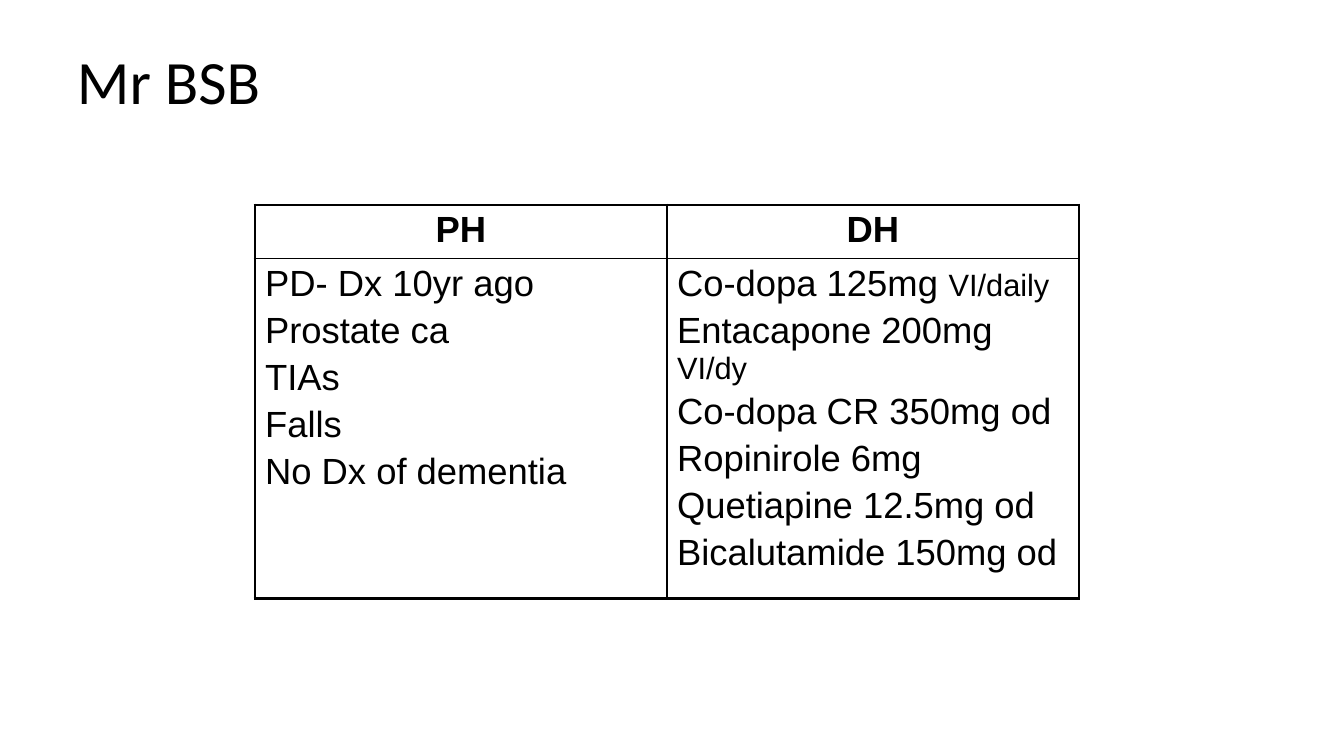
from lxml.etree import SubElement
from pptx import Presentation
from pptx.dml.color import RGBColor
from pptx.enum.text import MSO_ANCHOR, PP_ALIGN
from pptx.oxml.ns import qn
from pptx.util import Pt

COLORS = {"ink": "000000"}
TITLE = "Mr BSB"
HEADERS = ["PH", "DH"]
HISTORY = ["PD- Dx 10yr ago", "Prostate ca", "TIAs", "Falls", "No Dx of dementia"]
DRUGS = [
    ("Co-dopa 125mg ", "VI/daily"),
    ("Entacapone 200mg ", "VI/dy"),
    "Co-dopa CR 350mg od",
    "Ropinirole 6mg",
    "Quetiapine 12.5mg od",
    "Bicalutamide 150mg od",
]
ROWS = [[[header] for header in HEADERS], [HISTORY, DRUGS]]

SCALE = 914400 / 100.8
TITLE_AREA = (67, 13, 1109, 143)
TABLE_LEFT, TABLE_TOP = 255, 205
COLUMN_WIDTHS = [412, 412]
ROW_HEIGHTS = [51, 325]
INNER_LINE, OUTER_LINE = 1, 2.25
PARAGRAPH_GAP = 4.4

TITLE_FONT = {"name": "Calibri", "size": Pt(44)}
HEADER_FONT = {"name": "Arial", "size": Pt(26), "bold": True}
BODY_FONT = {"name": "Arial", "size": Pt(26), "bold": False}
DOSE_FONT = {"name": "Arial", "size": Pt(22), "bold": False}


def px(length):
    return round(length * SCALE)


def add_span(para, text, font_format):
    span = para.add_run()
    span.text = text
    for name, value in font_format.items():
        setattr(span.font, name, value)
    span.font.color.rgb = RGBColor.from_string(COLORS["ink"])


def set_borders(cell, widths):
    properties = cell._tc.get_or_add_tcPr()
    for side, width in widths.items():
        line = SubElement(properties, qn(f"a:ln{side}"), w=str(Pt(width)))
        fill = SubElement(line, qn("a:solidFill"))
        SubElement(fill, qn("a:srgbClr"), val=COLORS["ink"])


def add_title(page):
    box = page.shapes.add_textbox(*map(px, TITLE_AREA))
    frame = box.text_frame
    frame.word_wrap = True
    frame.vertical_anchor = MSO_ANCHOR.MIDDLE
    para = frame.paragraphs[0]
    para.line_spacing = 0.9
    add_span(para, TITLE, TITLE_FONT)


def fill_cell(cell, lines, is_header):
    for index, line in enumerate(lines):
        frame = cell.text_frame
        para = frame.add_paragraph() if index else frame.paragraphs[0]
        para.alignment = PP_ALIGN.CENTER if is_header else PP_ALIGN.LEFT
        if index:
            para.space_before = Pt(PARAGRAPH_GAP)
        drug, dose = line if isinstance(line, tuple) else (line, None)
        add_span(para, drug, HEADER_FONT if is_header else BODY_FONT)
        if dose:
            add_span(para, dose, DOSE_FONT)


def add_history_table(page):
    area = (TABLE_LEFT, TABLE_TOP, sum(COLUMN_WIDTHS), sum(ROW_HEIGHTS))
    table = page.shapes.add_table(len(ROWS), len(HEADERS), *map(px, area)).table
    table.first_row = table.horz_banding = False
    for column, width in zip(table.columns, COLUMN_WIDTHS):
        column.width = px(width)
    last_row, last_column = len(ROWS) - 1, len(HEADERS) - 1
    for row, contents in enumerate(ROWS):
        table.rows[row].height = px(ROW_HEIGHTS[row])
        for column, lines in enumerate(contents):
            cell = table.cell(row, column)
            outer = {
                "L": column == 0,
                "R": column == last_column,
                "T": row == 0,
                "B": row == last_row,
            }
            set_borders(cell, {side: OUTER_LINE if edge else INNER_LINE
                               for side, edge in outer.items()})
            cell.fill.background()
            fill_cell(cell, lines, row == 0)


def main():
    deck = Presentation()
    deck.slide_width, deck.slide_height = px(1344), px(756)
    page = deck.slides.add_slide(deck.slide_layouts[6])
    add_title(page)
    add_history_table(page)
    deck.save("out.pptx")


if __name__ == "__main__":
    main()
